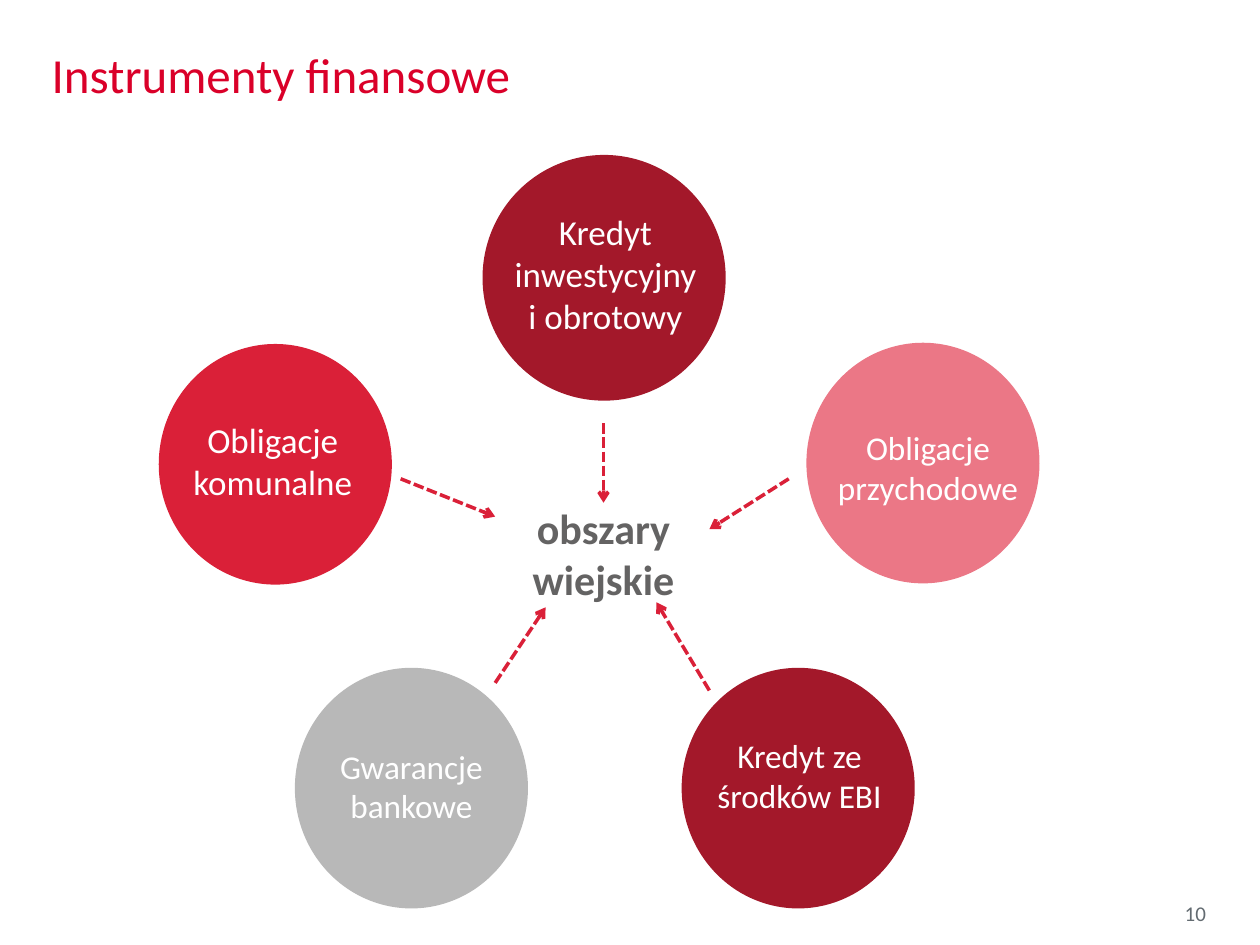
from dataclasses import dataclass

from lxml import etree
from pptx import Presentation
from pptx.dml.color import RGBColor
from pptx.enum.dml import MSO_LINE
from pptx.enum.shapes import MSO_CONNECTOR, MSO_SHAPE
from pptx.enum.text import MSO_ANCHOR, PP_ALIGN
from pptx.oxml.ns import qn
from pptx.util import Inches, Pt

ELLIPSE = MSO_SHAPE.OVAL
STRAIGHT = MSO_CONNECTOR.STRAIGHT
DASH = MSO_LINE.SQUARE_DOT
TOP = MSO_ANCHOR.TOP
LEFT, CENTER, RIGHT = PP_ALIGN.LEFT, PP_ALIGN.CENTER, PP_ALIGN.RIGHT
TITLE_ONLY = 5
COLS, ROWS = 100, 75


@dataclass(frozen=True)
class Theme:
    font: str = "Calibri"
    title: str = "DA0029"
    red: str = "DA2038"
    dark_red: str = "A3182A"
    pink: str = "EB7786"
    silver: str = "B8B8B8"
    white: str = "FFFFFF"
    hub: str = "646363"
    number: str = "636B71"
    title_size: int = 28
    hub_size: int = 24
    large_size: int = 20
    label_size: int = 19
    number_size: int = 12
    line_width: int = 2


class Deck:
    def __init__(self, theme):
        self.theme = theme
        self.prs = Presentation()
        self.prs.slide_width, self.prs.slide_height = Inches(10), Inches(7.5)
        self.s = self.prs.slides.add_slide(self.prs.slide_layouts[TITLE_ONLY])

    def x(self, cols):
        return round(self.prs.slide_width * cols / COLS)

    def y(self, rows):
        return round(self.prs.slide_height * rows / ROWS)

    def box(self, left, top, width, height):
        return self.x(left), self.y(top), self.x(width), self.y(height)

    def set_text(self, sp, lines, size, color, align, bold=False, wrap=True):
        tf = sp.text_frame
        tf.word_wrap = wrap
        tf.vertical_anchor = TOP
        tf.text = "\n".join(lines)
        for p in tf.paragraphs:
            p.alignment = align
            p.font.name = self.theme.font
            p.font.size = Pt(size)
            p.font.bold = bold
            p.font.color.rgb = RGBColor.from_string(color)

    def title(self, text, box):
        sp = self.s.shapes.title
        sp.left, sp.top, sp.width, sp.height = self.box(*box)
        self.set_text(sp, [text], self.theme.title_size, self.theme.title, LEFT)

    def text(self, lines, box, *style, **options):
        sp = self.s.shapes.add_textbox(*self.box(*box))
        self.set_text(sp, lines, *style, **options)

    def circle(self, box, color):
        sp = self.s.shapes.add_shape(ELLIPSE, *self.box(*box))
        sp.shadow.inherit = False
        sp.fill.solid()
        sp.fill.fore_color.rgb = RGBColor.from_string(color)
        sp.line.fill.background()

    def arrow(self, x1, y1, x2, y2):
        cn = self.s.shapes.add_connector(
            STRAIGHT, self.x(x1), self.y(y1), self.x(x2), self.y(y2))
        cn.line.color.rgb = RGBColor.from_string(self.theme.red)
        cn.line.width = Pt(self.theme.line_width)
        cn.line.dash_style = DASH
        sp_pr = cn._element.spPr
        etree.SubElement(sp_pr.find(qn("a:ln")), qn("a:tailEnd"), type="arrow")
        etree.SubElement(sp_pr, qn("a:effectLst"))


def main():
    t = Theme()
    deck = Deck(t)
    deck.title("Instrumenty finansowe", (3.1, 3, 72, 10.7))
    deck.text(["10"], (75.3, 71, 21.4, 4), t.number_size, t.number, RIGHT)

    small, large = (18.5, 19.1), (19.3, 19.5)
    label_width = 18.9
    instruments = [
        (["Obligacje przychodowe"], (64, 27.2), small, t.pink,
         (64.2, 33.4), 7.4, t.label_size),
        (["Kredyt ze środków EBI"], (54.1, 53), small, t.dark_red,
         (54, 57.9), 7.8, t.label_size),
        (["Gwarancje bankowe"], (23.4, 53), small, t.silver,
         (23.2, 58.7), 7.8, t.label_size),
        (["Obligacje komunalne"], (12.6, 27.3), small, t.red,
         (12.2, 32.7), 8.2, t.large_size),
        (["Kredyt inwestycyjny", "i obrotowy"], (38.3, 12.3), large, t.dark_red,
         (38.6, 16.2), 11.7, t.large_size),
    ]
    for lines, corner, size, color, label, height, points in instruments:
        deck.circle(corner + size, color)
        deck.text(lines, label + (label_width, height), points, t.white, CENTER)

    deck.text(["obszary", "wiejskie"], (41.2, 39.4, 13.4, 9.1),
              t.hub_size, t.hub, CENTER, bold=True, wrap=False)

    arrows = [
        (39.3, 54.2, 43.3, 48.2),
        (56.3, 54.8, 52.1, 47.8),
        (31.8, 38, 39.3, 41),
        (62.6, 38, 56.3, 42),
        (47.9, 33.6, 47.9, 39.9),
    ]
    for ends in arrows:
        deck.arrow(*ends)

    deck.prs.save("out.pptx")


if __name__ == "__main__":
    main()
